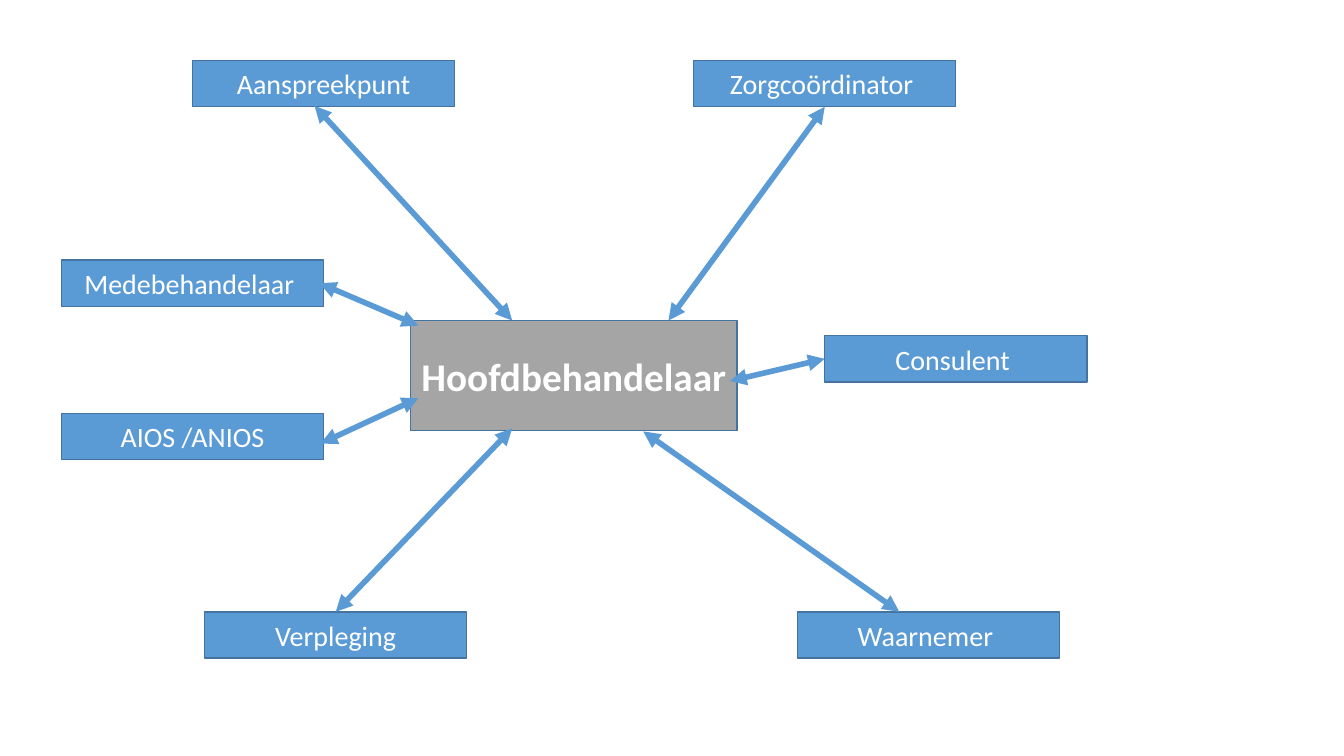
from lxml import etree
from pptx import Presentation
from pptx import util as u
from pptx.dml.color import RGBColor
from pptx.enum import shapes, text
from pptx.oxml.ns import qn

BLUE, GREY, EDGE, WHITE = "5B9BD5", "A5A5A5", "43739E", "FFFFFF"
TOP, LEFT = 0, 1  # connection sites
BOTTOM = 2
ROLE_SIZE = (2.6, 0.46)
HUB = ("Hoofdbehandelaar", (4.07, 3.18), (3.24, 1.09))

# name, box corner, arrow end at the role, arrow end at the hub, joined side
ROLES = [
    ("Zorgcoördinator ", (6.88, 0.6), (8.18, 1.06), (6.63, 3.18), BOTTOM),
    ("Medebehandelaar ", (0.61, 2.58), (3.17, 2.81), (4.15, 3.23), None),
    ("Verpleging", (2.03, 6.07), (3.33, 6.07), (5.08, 4.25), TOP),
    ("Consulent ", (8.18, 3.33), (8.18, 3.56), (7.24, 3.78), LEFT),
    ("Aanspreekpunt", (1.91, 0.6), (3.12, 1.05), (5.08, 3.18), None),
    ("Waarnemer ", (7.91, 6.07), (8.92, 6.07), (6.38, 4.28), None),
    ("AIOS /ANIOS", (0.61, 4.1), (3.18, 4.4), (4.15, 3.95), None),
]


def color(value):
    return RGBColor.from_string(value)


def add_box(page, name, corner, size, fill, points, bold=False):
    box = page.shapes.add_shape(
        shapes.MSO_SHAPE.RECTANGLE, *(u.Inches(n) for n in corner + size))
    box.shadow.inherit = False
    box.fill.solid()
    box.fill.fore_color.rgb = color(fill)
    box.line.color.rgb = color(EDGE)
    box.line.width = u.Pt(1)
    frame = box.text_frame
    frame.word_wrap = True
    frame.vertical_anchor = text.MSO_ANCHOR.MIDDLE
    para = frame.paragraphs[0]
    para.alignment = text.PP_ALIGN.CENTER
    span = para.add_run()
    span.text = name
    span.font.name = "Calibri"
    span.font.size = u.Pt(points)
    span.font.bold = bold
    span.font.color.rgb = color(WHITE)
    return box


def add_double_arrow(page, start, end):
    arrow = page.shapes.add_connector(
        shapes.MSO_CONNECTOR.STRAIGHT, *(u.Inches(n) for n in start + end))
    arrow.line.color.rgb = color(BLUE)
    arrow.line.width = u.Pt(4)
    line = arrow.line._get_or_add_ln()
    for tag in ("a:headEnd", "a:tailEnd"):
        etree.SubElement(line, qn(tag), type="triangle")
    etree.SubElement(arrow._element.spPr, qn("a:effectLst"))
    return arrow


def main():
    deck = Presentation()
    deck.slide_width, deck.slide_height = u.Inches(13.33), u.Inches(7.5)
    page = deck.slides.add_slide(deck.slide_layouts[6])

    add_box(page, *HUB, GREY, 28, bold=True)
    boxes = [add_box(page, name, corner, ROLE_SIZE, BLUE, 20)
             for name, corner, *_ in ROLES]
    for box, (_, _, role_end, hub_end, side) in zip(boxes, ROLES):
        arrow = add_double_arrow(page, role_end, hub_end)
        if side is not None:
            arrow.begin_connect(box, side)

    deck.save("out.pptx")


if __name__ == "__main__":
    main()
